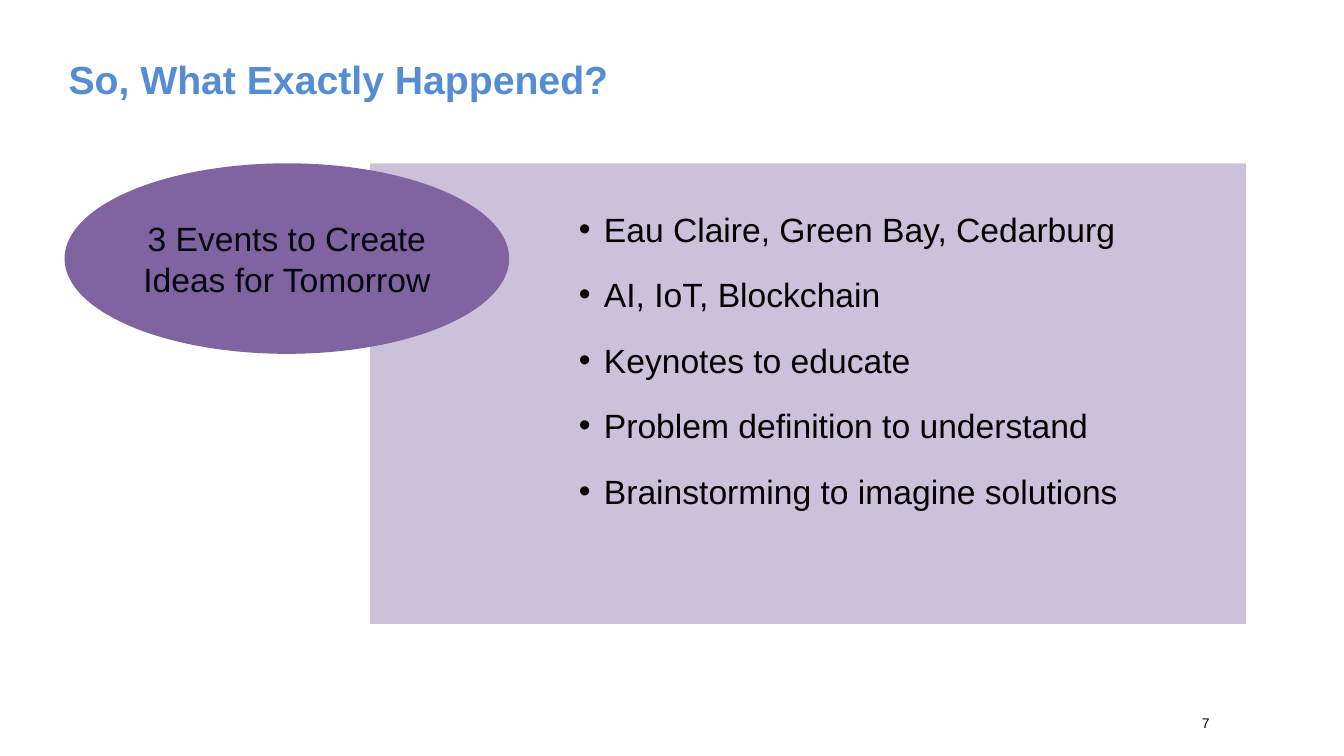
from lxml.etree import SubElement
from pptx import Presentation
from pptx.dml.color import RGBColor
from pptx.enum.shapes import MSO_SHAPE
from pptx.enum.text import MSO_ANCHOR, MSO_AUTO_SIZE, PP_ALIGN
from pptx.oxml.ns import qn
from pptx.util import Inches, Pt

TITLE = "So, What Exactly Happened?"
EVENTS = """3 Events to Create
Ideas for Tomorrow"""
TOPICS = [
    "Eau Claire, Green Bay, Cedarburg",
    "AI, IoT, Blockchain",
    "Keynotes to educate",
    "Problem definition to understand",
    "Brainstorming to imagine solutions",
]
PAGE_NUMBER = "7"

FONT = "Arial"
BLUE = RGBColor(0x54, 0x8D, 0xD4)
PURPLE = RGBColor(0x80, 0x64, 0xA2)
LAVENDER = RGBColor(0xCC, 0xC1, 0xDA)
BLACK = RGBColor(0, 0, 0)
OVAL_INK = RGBColor(0x04, 0x09, 0x10)
NUMBER_INK = RGBColor(0x03, 0x07, 0x0C)


def place(box, left, top, width, height):
    box.left, box.top = Inches(left), Inches(top)
    box.width, box.height = Inches(width), Inches(height)


def style(para, size, color, align=PP_ALIGN.LEFT, bold=False):
    para.alignment = align
    para.font.name = FONT
    para.font.size = Pt(size)
    para.font.bold = bold
    para.font.color.rgb = color


def set_margins(frame, right=0):
    frame.margin_left = frame.margin_top = frame.margin_bottom = 0
    frame.margin_right = Inches(right)


def add_filled(page, kind, color, left, top, width, height):
    shape = page.shapes.add_shape(
        kind, Inches(left), Inches(top), Inches(width), Inches(height))
    shape.shadow.inherit = False
    shape.fill.solid()
    shape.fill.fore_color.rgb = color
    shape.line.fill.background()
    return shape


def add_bullet(para):
    properties = para._p.get_or_add_pPr()
    properties.set("marL", str(Inches(0.25)))
    properties.set("indent", str(-Inches(0.25)))
    color = SubElement(properties, qn("a:buClr"))
    SubElement(color, qn("a:srgbClr"), val=str(BLACK))
    SubElement(properties, qn("a:buFont"), typeface=FONT)
    SubElement(properties, qn("a:buChar"), char="•")


def fill_title(title):
    place(title, 0.68, 0.52, 11.33, 0.5)
    frame = title.text_frame
    frame.text = TITLE
    frame.vertical_anchor = MSO_ANCHOR.BOTTOM
    set_margins(frame)
    style(frame.paragraphs[0], 28, BLUE, bold=True)


def fill_topics(body):
    place(body, 5.64, 2.02, 6.14, 3.13)
    frame = body.text_frame
    frame.auto_size = MSO_AUTO_SIZE.NONE
    frame.text = "\n".join(TOPICS)
    for para in frame.paragraphs:
        style(para, 24, BLACK)
        para.space_before = Pt(0)
        para.space_after = Pt(18)
        add_bullet(para)


def add_events(page):
    oval = add_filled(page, MSO_SHAPE.OVAL, PURPLE, 0.64, 1.62, 4.41, 1.89)
    frame = oval.text_frame
    frame.vertical_anchor = MSO_ANCHOR.MIDDLE
    para = frame.paragraphs[0]
    para.text = EVENTS
    style(para, 24, OVAL_INK, PP_ALIGN.CENTER)


def add_page_number(page):
    box = page.shapes.add_textbox(
        Inches(11.92), Inches(6.97), Inches(0.44), Inches(0.4))
    frame = box.text_frame
    frame.word_wrap = True
    frame.vertical_anchor = MSO_ANCHOR.MIDDLE
    set_margins(frame, right=0.1)
    frame.text = PAGE_NUMBER
    style(frame.paragraphs[0], 10, NUMBER_INK)


def main():
    """Build the slide on the three innovation events."""
    deck = Presentation()
    deck.slide_width, deck.slide_height = Inches(13.33), Inches(7.5)
    page = deck.slides.add_slide(deck.slide_layouts[1])
    title, body = page.placeholders
    panel = add_filled(page, MSO_SHAPE.RECTANGLE, LAVENDER, 3.67, 1.62, 8.69, 4.57)
    title.element.addprevious(panel.element)
    fill_title(title)
    fill_topics(body)
    add_events(page)
    add_page_number(page)
    deck.save("out.pptx")


if __name__ == "__main__":
    main()
